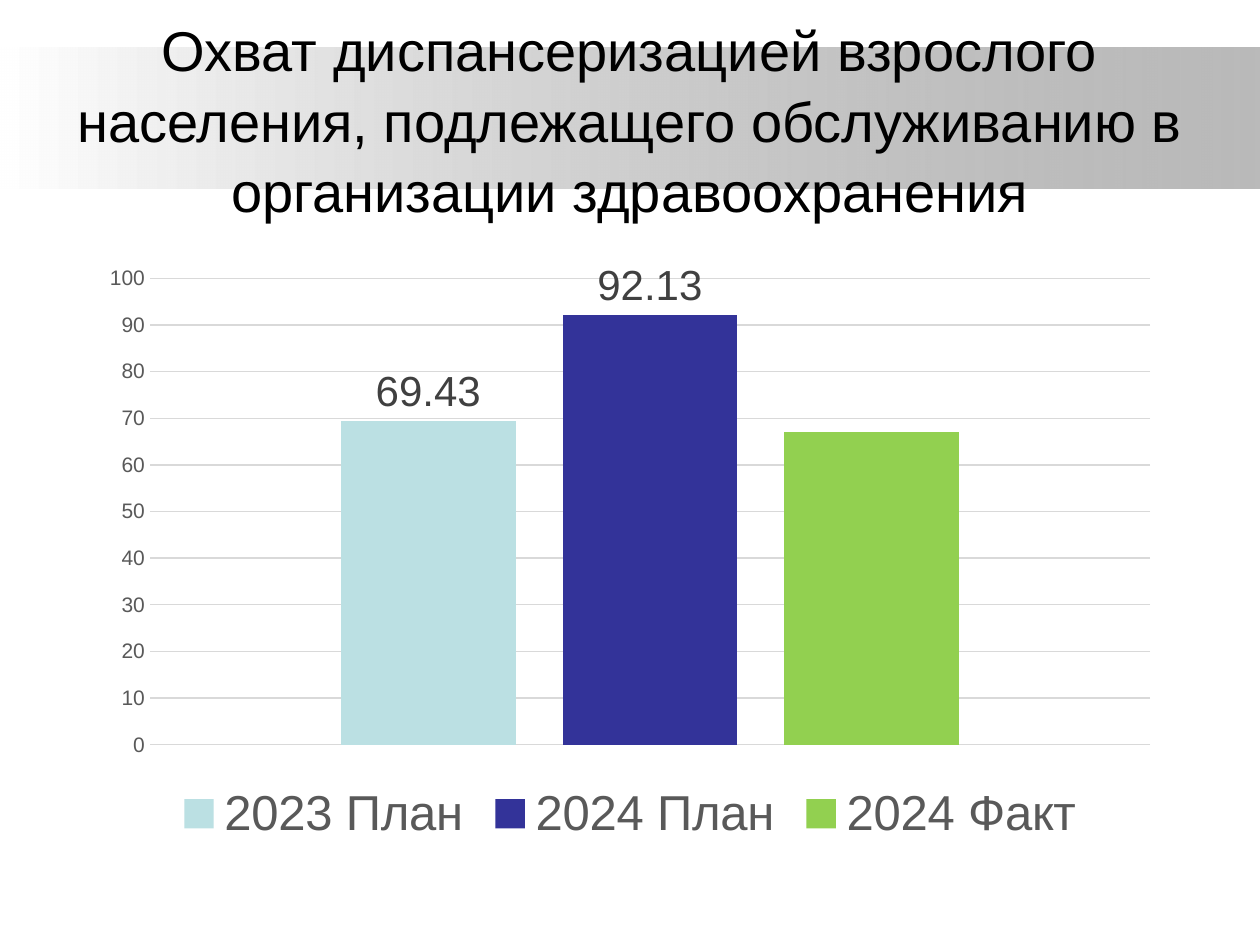
import dataclasses

import lxml.etree
import pptx
import pptx.chart.data
import pptx.dml.color
import pptx.enum.chart
import pptx.enum.shapes
import pptx.enum.text
import pptx.oxml.ns
import pptx.util


@dataclasses.dataclass(frozen=True)
class Theme:
    font: str = "Arial"
    title_color: str = "000000"
    muted: str = "595959"
    label_color: str = "404040"
    grid: str = "D9D9D9"
    band_start: str = "FFFFFF"
    band_end: str = "808080"
    band_end_alpha: int = 54
    title_size: int = 32
    legend_size: int = 28
    label_size: int = 24
    axis_size: int = 12
    chart_size: int = 10


@dataclasses.dataclass(frozen=True)
class Box:
    left: int
    top: int
    width: int
    height: int

    def share(self, left, top, width, height):
        return Box(
            self.left + round(self.width * left),
            self.top + round(self.height * top),
            round(self.width * width),
            round(self.height * height),
        )

    def bounds(self):
        return self.left, self.top, self.width, self.height


THEME = Theme()
COVERAGE = [
    ("2023 План", 69.43, "BBE0E3", True),
    ("2024 План", 92.13, "333399", True),
    ("2024 Факт", 67, "92D050", False),
]


def rgb(value):
    return pptx.dml.color.RGBColor.from_string(value)


def style_font(font, size, color):
    font.name = THEME.font
    font.size = pptx.util.Pt(size)
    font.color.rgb = rgb(color)


def add_band(slide, box):
    band = slide.shapes.add_shape(
        pptx.enum.shapes.MSO_SHAPE.RECTANGLE, *box.bounds()
    )
    band.shadow.inherit = False
    band.line.fill.background()
    band.fill.gradient()
    band.fill.gradient_angle = 0
    start, end = band.fill.gradient_stops
    start.position, end.position = 0, 1
    start.color.rgb = rgb(THEME.band_start)
    end.color.rgb = rgb(THEME.band_end)
    qn = pptx.oxml.ns.qn
    end_color = list(band.fill._xPr.iter(qn("a:srgbClr")))[-1]
    lxml.etree.SubElement(
        end_color, qn("a:alpha"), val=str(THEME.band_end_alpha * 1000)
    )


def add_heading(slide, box):
    heading = slide.shapes.add_textbox(*box.bounds())
    frame = heading.text_frame
    frame.word_wrap = True
    frame.vertical_anchor = pptx.enum.text.MSO_ANCHOR.MIDDLE
    frame.text = (
        "Охват диспансеризацией взрослого населения, "
        "подлежащего обслуживанию в организации здравоохранения"
    )
    paragraph = frame.paragraphs[0]
    paragraph.alignment = pptx.enum.text.PP_ALIGN.CENTER
    paragraph.line_spacing = 1.05
    style_font(paragraph.runs[0].font, THEME.title_size, THEME.title_color)


def add_coverage_chart(slide, box):
    data = pptx.chart.data.CategoryChartData()
    data.categories = ["1"]
    for name, value, _, _ in COVERAGE:
        data.add_series(name, [value])
    chart = slide.shapes.add_chart(
        pptx.enum.chart.XL_CHART_TYPE.COLUMN_CLUSTERED, *box.bounds(), data
    ).chart
    style_font(chart.font, THEME.chart_size, THEME.title_color)
    chart.has_title = False

    chart.has_legend = True
    chart.legend.position = pptx.enum.chart.XL_LEGEND_POSITION.BOTTOM
    chart.legend.include_in_layout = False
    style_font(chart.legend.font, THEME.legend_size, THEME.muted)

    chart.category_axis.visible = False
    scale = chart.value_axis
    scale.minimum_scale = 0
    scale.maximum_scale = 100
    scale.major_unit = 10
    scale.major_tick_mark = pptx.enum.chart.XL_TICK_MARK.NONE
    scale.minor_tick_mark = pptx.enum.chart.XL_TICK_MARK.NONE
    scale.format.line.fill.background()
    style_font(scale.tick_labels.font, THEME.axis_size, THEME.muted)
    scale.has_major_gridlines = True
    gridline = scale.major_gridlines.format.line
    gridline.color.rgb = rgb(THEME.grid)
    gridline.width = pptx.util.Pt(0.75)

    plot = chart.plots[0]
    plot.gap_width = 219
    plot.overlap = -27
    plot.vary_by_categories = False
    for series, (_, _, color, labelled) in zip(plot.series, COVERAGE):
        series.invert_if_negative = False
        series.format.fill.solid()
        series.format.fill.fore_color.rgb = rgb(color)
        if labelled:
            labels = series.data_labels
            labels.show_value = True
            labels.position = pptx.enum.chart.XL_LABEL_POSITION.OUTSIDE_END
            style_font(labels.font, THEME.label_size, THEME.label_color)


def build_slide(deck):
    slide = deck.slides.add_slide(deck.slide_layouts[6])
    page = Box(0, 0, deck.slide_width, deck.slide_height)
    add_band(slide, page.share(0, 0.05, 1, 0.15))
    add_heading(slide, page.share(0.05, 0.04, 0.9, 0.17))
    add_coverage_chart(slide, page.share(0.07, 0.27, 0.86, 0.63))


def main():
    deck = pptx.Presentation()
    deck.slide_width = pptx.util.Inches(10)
    deck.slide_height = pptx.util.Inches(7.5)
    build_slide(deck)
    deck.save("out.pptx")


if __name__ == "__main__":
    main()
